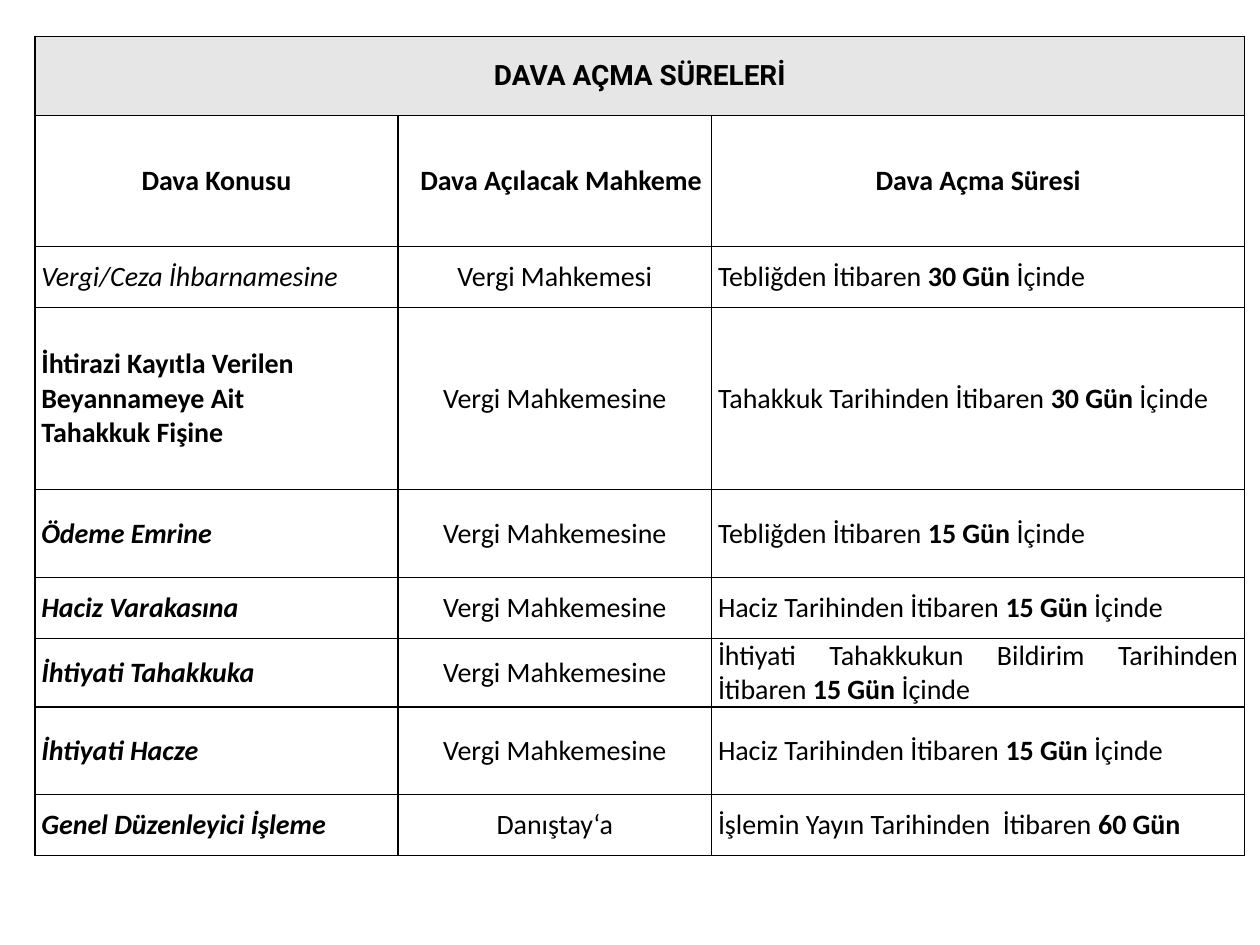
import pptx
import pptx.dml.color
import pptx.enum.text
import pptx.oxml
import pptx.oxml.ns
import pptx.util
from dataclasses import dataclass

Pt = pptx.util.Pt
RGB = pptx.dml.color.RGBColor
ALIGN = pptx.enum.text.PP_ALIGN
MIDDLE = pptx.enum.text.MSO_ANCHOR.MIDDLE


@dataclass(frozen=True)
class Theme:
    ink: str = "000000"
    title_fill: str = "E6E6E6"
    title_font: str = "Roboto"
    body_font: str = "Calibri"
    size: int = 16
    border: int = 1
    side_inset: float = 3.6


THEME = Theme()
COLUMN_WIDTHS = [207.4, 179.3, 304.6]
ROW_HEIGHTS = [45.2, 74.9, 34.8, 104.2, 50.2, 34.8, 34.8, 50.2, 34.8]

PLAIN = {"bold": False, "italic": False}
BOLD = {"bold": True, "italic": False}
ITALIC = {"bold": False, "italic": True}
BOLD_ITALIC = {"bold": True, "italic": True}

TITLE = "DAVA AÇMA SÜRELERİ"
HEADINGS = ["Dava Konusu", "Dava Açılacak Mahkeme", "Dava Açma Süresi"]
TAX_COURT = "Vergi Mahkemesine"
# Subject lines, subject style, court, start of period, period, ending
CASES = [
    (["Vergi/Ceza İhbarnamesine"], ITALIC, "Vergi Mahkemesi",
     "Tebliğden İtibaren ", "30 Gün", " İçinde"),
    (["İhtirazi Kayıtla Verilen", "Beyannameye Ait", "Tahakkuk Fişine"], BOLD, TAX_COURT,
     "Tahakkuk Tarihinden İtibaren ", "30 Gün", " İçinde"),
    (["Ödeme Emrine"], BOLD_ITALIC, TAX_COURT,
     "Tebliğden İtibaren ", "15 Gün", " İçinde"),
    (["Haciz Varakasına"], BOLD_ITALIC, TAX_COURT,
     "Haciz Tarihinden İtibaren ", "15 Gün", " İçinde"),
    (["İhtiyati Tahakkuka"], BOLD_ITALIC, TAX_COURT,
     "İhtiyati Tahakkukun Bildirim Tarihinden İtibaren ", "15 Gün", " İçinde"),
    (["İhtiyati Hacze"], BOLD_ITALIC, TAX_COURT,
     "Haciz Tarihinden İtibaren ", "15 Gün", " İçinde"),
    (["Genel Düzenleyici İşleme"], BOLD_ITALIC, "Danıştay‘a",
     "İşlemin Yayın Tarihinden  İtibaren ", "60 Gün", ""),
]


def apply_format(target, values):
    for name, value in values.items():
        setattr(target, name, value)


def add_borders(cell):
    properties = cell._tc.get_or_add_tcPr()
    for side in ("lnL", "lnR", "lnT", "lnB"):
        properties.append(pptx.oxml.parse_xml(
            f'<a:{side} {pptx.oxml.ns.nsdecls("a")} w="{Pt(THEME.border)}">'
            f'<a:solidFill><a:srgbClr val="{THEME.ink}"/></a:solidFill></a:{side}>'))


def style_cell(cell, fill=None):
    apply_format(cell, {
        "margin_left": Pt(THEME.side_inset), "margin_right": Pt(THEME.side_inset),
        "margin_top": 0, "margin_bottom": 0, "vertical_anchor": MIDDLE})
    add_borders(cell)
    if fill:
        cell.fill.solid()
        cell.fill.fore_color.rgb = RGB.from_string(fill)
    else:
        cell.fill.background()


def write_cell(cell, lines, alignment, font=THEME.body_font):
    """Each line is a list of (text, style) runs."""
    frame = cell.text_frame
    for number, line in enumerate(lines):
        paragraph = frame.add_paragraph() if number else frame.paragraphs[0]
        paragraph.alignment = alignment
        for text, style in line:
            run = paragraph.add_run()
            run.text = text
            apply_format(run.font, {"name": font, "size": Pt(THEME.size), **style})
            run.font.color.rgb = RGB.from_string(THEME.ink)


def add_deadline_table(slide):
    frame = slide.shapes.add_table(
        len(ROW_HEIGHTS), len(COLUMN_WIDTHS), Pt(20), Pt(20.8),
        Pt(sum(COLUMN_WIDTHS)), Pt(sum(ROW_HEIGHTS)))
    deadlines = frame.table
    apply_format(deadlines, {"first_row": False, "horz_banding": False})
    for column, width in zip(deadlines.columns, COLUMN_WIDTHS):
        column.width = Pt(width)
    for number, (row, height) in enumerate(zip(deadlines.rows, ROW_HEIGHTS)):
        row.height = Pt(height)
        for cell in row.cells:
            style_cell(cell, None if number else THEME.title_fill)
    return deadlines


def write_headings(deadlines):
    title = deadlines.cell(0, 0)
    title.merge(deadlines.cell(0, len(COLUMN_WIDTHS) - 1))
    write_cell(title, [[(TITLE, BOLD)]], ALIGN.CENTER, THEME.title_font)
    apply_format(title.text_frame.paragraphs[0],
                 {"space_before": Pt(4), "space_after": Pt(4)})
    for column, heading in enumerate(HEADINGS):
        write_cell(deadlines.cell(1, column), [[(heading, BOLD)]], ALIGN.CENTER)
    # The court heading has a first-line indent
    court = deadlines.cell(1, 1).text_frame.paragraphs[0]
    court.space_before = Pt(2)
    court._p.get_or_add_pPr().set("indent", str(Pt(7.2)))


def write_cases(deadlines):
    for row, (subject, style, court, start, period, ending) in enumerate(CASES, 2):
        deadline = [(start, PLAIN), (period, BOLD)]
        if ending:
            deadline.append((ending, PLAIN))
        write_cell(deadlines.cell(row, 0), [[(line, style)] for line in subject], ALIGN.JUSTIFY)
        write_cell(deadlines.cell(row, 1), [[(court, PLAIN)]], ALIGN.CENTER)
        write_cell(deadlines.cell(row, 2), [deadline], ALIGN.JUSTIFY)


def main():
    deck = pptx.Presentation()
    apply_format(deck, {"slide_width": Pt(720), "slide_height": Pt(540)})
    slide = deck.slides.add_slide(deck.slide_layouts[6])
    deadlines = add_deadline_table(slide)
    write_headings(deadlines)
    write_cases(deadlines)
    deck.save("out.pptx")


if __name__ == "__main__":
    main()
